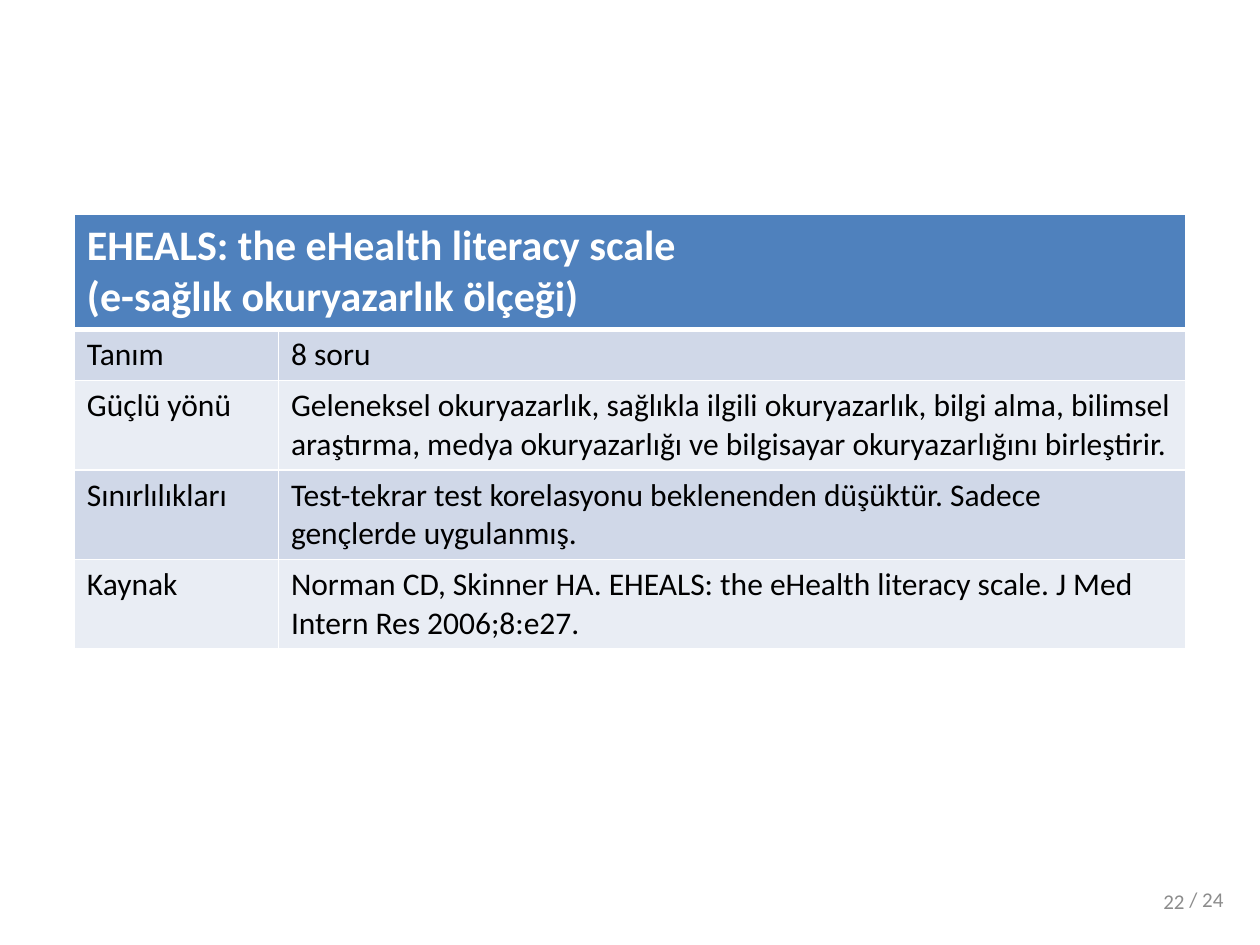
from pptx import Presentation
from pptx.dml.color import RGBColor
from pptx.enum.text import MSO_ANCHOR, PP_ALIGN
from pptx.oxml.ns import qn
from pptx.util import Inches, Pt
from lxml.etree import SubElement

HEAD = ["EHEALS: the eHealth literacy scale", "(e-sağlık okuryazarlık ölçeği)"]
ROWS = [
    ("Tanım", "8 soru"),
    ("Güçlü yönü", "Geleneksel okuryazarlık, sağlıkla ilgili okuryazarlık, bilgi alma, "
     "bilimsel araştırma, medya okuryazarlığı ve bilgisayar okuryazarlığını birleştirir."),
    ("Sınırlılıkları", "Test-tekrar test korelasyonu beklenenden düşüktür. "
     "Sadece gençlerde uygulanmış."),
    ("Kaynak", "Norman CD, Skinner HA. EHEALS: the eHealth literacy scale. "
     "J Med Intern Res 2006;8:e27."),
]
WIDTHS = [1.62, 7.2]
HEIGHTS = [0.88, 0.4, 0.71, 0.71, 0.71]
BANDS = ["D0D8E8", "E9EDF4"]


def color(code):
    return RGBColor.from_string(code)


def write(frame, lines, size, code, bold=False, align=PP_ALIGN.LEFT):
    for i, line in enumerate(lines):
        para = frame.paragraphs[0] if i == 0 else frame.add_paragraph()
        para.alignment = align
        run = para.add_run()
        run.text = line
        font = run.font
        font.name, font.size, font.bold = "Calibri", Pt(size), bold
        font.color.rgb = color(code)


def border(cell, side, width):
    props = cell._tc.get_or_add_tcPr()
    line = SubElement(props, qn("a:ln" + side), w=str(Pt(width)))
    fill = SubElement(line, qn("a:solidFill"))
    SubElement(fill, qn("a:srgbClr"), val="FFFFFF")


def style(cell, code, top=1, bottom=1):
    for side, width in (("L", 1), ("R", 1), ("T", top), ("B", bottom)):
        border(cell, side, width)
    cell.fill.solid()
    cell.fill.fore_color.rgb = color(code)


def add_grid(slide):
    frame = slide.shapes.add_table(
        len(HEIGHTS), len(WIDTHS), Inches(0.59), Inches(1.7),
        Inches(sum(WIDTHS)), Inches(sum(HEIGHTS)))
    table = frame.table
    for col, width in zip(table.columns, WIDTHS):
        col.width = Inches(width)
    for row, height in zip(table.rows, HEIGHTS):
        row.height = Inches(height)
    for cell in table.rows[0].cells:
        style(cell, "4F81BD", bottom=3)
    title = table.cell(0, 0)
    title.merge(table.cell(0, 1))
    write(title.text_frame, HEAD, 24, "FFFFFF", True)
    for i, row in enumerate(ROWS):
        for j, text in enumerate(row):
            cell = table.cell(i + 1, j)
            style(cell, BANDS[i % 2], top=1 if i else 3)
            write(cell.text_frame, [text], 18, "000000")


def add_label(slide, text, box, align):
    frame = slide.shapes.add_textbox(*map(Inches, box)).text_frame
    frame.word_wrap = True
    frame.vertical_anchor = MSO_ANCHOR.MIDDLE
    write(frame, [text], 12, "8C8C8C", align=align)


def main():
    deck = Presentation()
    deck.slide_width, deck.slide_height = Inches(10), Inches(7.5)
    slide = deck.slides.add_slide(deck.slide_layouts[6])
    add_grid(slide)
    add_label(slide, "/ 24", (9.25, 6.9, 0.65, 0.47), PP_ALIGN.CENTER)
    add_label(slide, "22", (7.17, 6.95, 2.33, 0.4), PP_ALIGN.RIGHT)
    deck.save("out.pptx")


if __name__ == "__main__":
    main()
